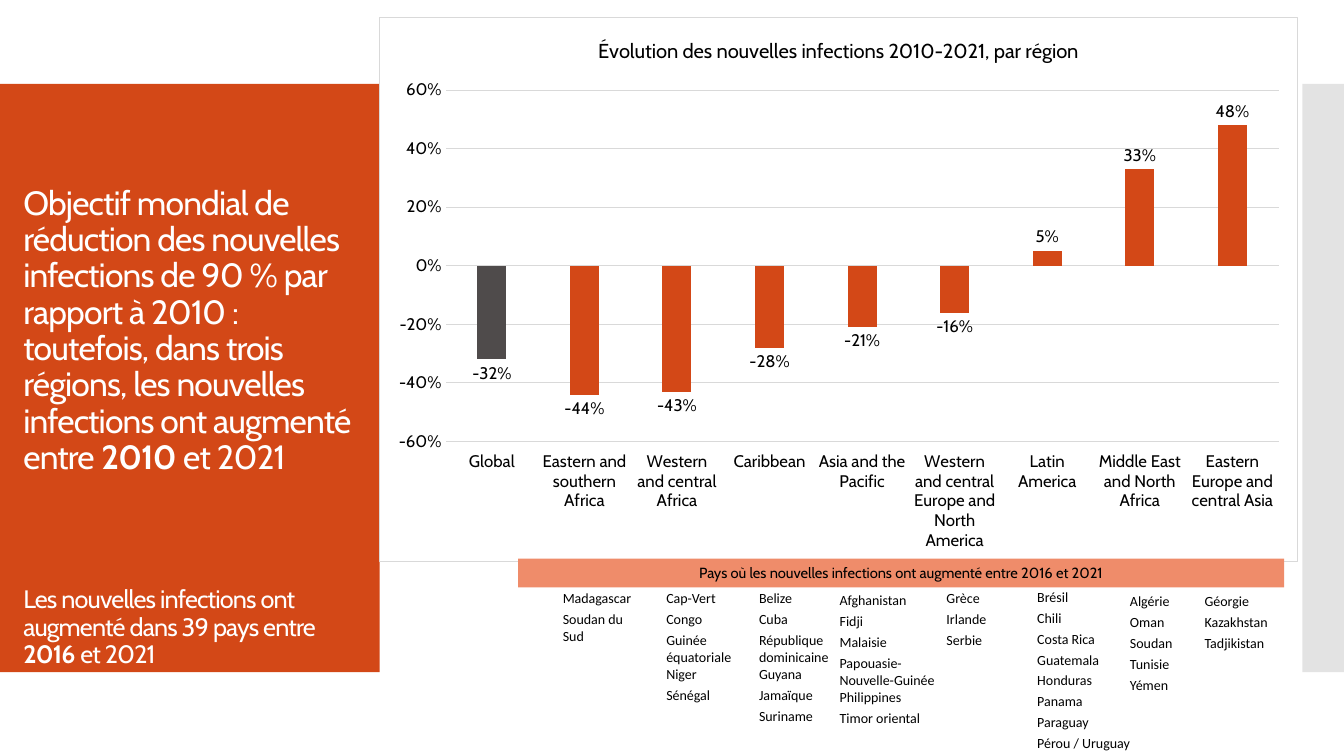
from lxml import etree
from pptx import Presentation
from pptx.chart.data import CategoryChartData
from pptx.dml.color import RGBColor
from pptx.enum.chart import XL_CHART_TYPE, XL_LABEL_POSITION, XL_TICK_LABEL_POSITION, XL_TICK_MARK
from pptx.enum.shapes import MSO_SHAPE
from pptx.enum.text import MSO_ANCHOR, PP_ALIGN
from pptx.oxml import parse_xml
from pptx.oxml.ns import nsdecls, qn
from pptx.util import Inches, Pt

RECT = MSO_SHAPE.RECTANGLE
CLUSTER = XL_CHART_TYPE.COLUMN_CLUSTERED
OUTSIDE = XL_LABEL_POSITION.OUTSIDE_END
LOW = XL_TICK_LABEL_POSITION.LOW
NO_TICK = XL_TICK_MARK.NONE
LEFT, CENTER = PP_ALIGN.LEFT, PP_ALIGN.CENTER
TOP, MIDDLE = MSO_ANCHOR.TOP, MSO_ANCHOR.MIDDLE

ORANGE = RGBColor(0xD3, 0x48, 0x17)
SALMON = RGBColor(0xEF, 0x8C, 0x6A)
DARK = RGBColor(0x4F, 0x4B, 0x4B)
GRAY = RGBColor(0xC8, 0xC8, 0xC8)
LINE = RGBColor(0xD9, 0xD9, 0xD9)
BLACK = RGBColor(0, 0, 0)
WHITE = RGBColor(255, 255, 255)

deck = Presentation()
deck.slide_width, deck.slide_height = Inches(13.33), Inches(7.5)
COL, ROW = deck.slide_width / 100, deck.slide_height / 100
slide = deck.slides.add_slide(deck.slide_layouts[6])


def area(x, y, wide, high):
    """Turn shares of the slide, in percent, into a box."""
    return int(x * COL), int(y * ROW), int(wide * COL), int(high * ROW)


def write(frame, text, size=10, font="Cabin", color=BLACK, align=LEFT, space=1.0, track=0):
    """Fill a text frame; parts between * are bold."""
    frame.word_wrap = True
    para = frame.paragraphs[0]
    para.alignment, para.line_spacing = align, space
    for i, part in enumerate(text.split("*")):
        run = para.add_run()
        run.text = part
        run.font.size, run.font.name = Pt(size), font
        run.font.color.rgb = color
        run.font.bold = i % 2 == 1
        if track:
            run.font._element.set("spc", str(track))


# Side panels
for box, tone in [((0, 11.1, 28.25, 77.8), ORANGE), ((96.9, 11.1, 3.1, 77.8), GRAY)]:
    panel = slide.shapes.add_shape(RECT, *area(*box))
    panel.shadow.inherit = False
    panel.fill.solid()
    panel.fill.fore_color.rgb = tone
    panel.line.fill.background()
tint = panel.fill._xPr.find(".//" + qn("a:srgbClr"))
etree.SubElement(tint, qn("a:alpha")).set("val", "50000")

# Headline and note
heads = [
    (24, 24, 40, "Objectif mondial de réduction des nouvelles infections de 90 % par rapport à 2010 : "
     "toutefois, dans trois régions, les nouvelles infections ont augmenté entre *2010* et 2021"),
    (18, 77, 12, "Les nouvelles infections ont augmenté dans 39 pays entre *2016* et 2021"),
]
for size, y, high, text in heads:
    box = slide.shapes.add_textbox(*area(1, y, 25.9, high))
    write(box.text_frame, text, size=size, color=WHITE, space=0.9, track=-60)

# Chart of change by region
change = [
    ("Global", -0.32), ("Eastern and southern Africa", -0.44),
    ("Western and central Africa", -0.43), ("Caribbean", -0.28),
    ("Asia and the Pacific", -0.21),
    ("Western and central Europe and North America", -0.16),
    ("Latin America", 0.05), ("Middle East and North Africa", 0.33),
    ("Eastern Europe and central Asia", 0.48),
]
data = CategoryChartData(number_format="0%")
data.categories = [name for name, rate in change]
data.add_series("Series 1", [rate for name, rate in change])
chart = slide.shapes.add_chart(CLUSTER, *area(28.2, 2.2, 68.35, 72.2), data).chart
chart.has_legend = False
chart.font.size, chart.font.name = Pt(12), "Cabin"
chart.font.color.rgb = BLACK
chart.has_title = True
chart.chart_title.include_in_layout = False
write(chart.chart_title.text_frame, "Évolution des nouvelles infections 2010-2021, par région",
      size=14.4, align=CENTER)

plot = chart.plots[0]
plot.vary_by_categories = False
plot.gap_width, plot.overlap = 219, -27
bars = plot.series[0]
bars.invert_if_negative = False
for part, tone in [(bars, ORANGE), (bars.points[0], DARK)]:
    part.format.fill.solid()
    part.format.fill.fore_color.rgb = tone
plot.has_data_labels = True
tags = plot.data_labels
tags.show_value = True
tags.number_format, tags.number_format_is_linked = "0%", False
tags.position = OUTSIDE
tags.font.size, tags.font.name = Pt(12), "Cabin"
tags.font.color.rgb = BLACK

# Axes
cats, vals = chart.category_axis, chart.value_axis
for axis in (cats, vals):
    axis.major_tick_mark = axis.minor_tick_mark = NO_TICK
cats.tick_label_position = LOW
vals.minimum_scale, vals.maximum_scale, vals.major_unit = -0.6, 0.6, 0.2
vals.tick_labels.number_format = "0%"
vals.tick_labels.number_format_is_linked = False
vals.format.line.fill.background()
for line in (cats.format.line, vals.major_gridlines.format.line):
    line.color.rgb, line.width = LINE, Pt(0.75)

# Plot place and chart border
place = {"x": 0.072, "y": 0.134, "w": 0.908, "h": 0.645}
room = chart._chartSpace.find(".//" + qn("c:plotArea"))
for old in room.findall(qn("c:layout")):
    room.remove(old)
modes = "".join(f'<c:{key}Mode val="edge"/>' for key in "xy")
spots = "".join(f'<c:{key} val="{share}"/>' for key, share in place.items())
room.insert(0, parse_xml(
    f'<c:layout {nsdecls("c")}><c:manualLayout><c:layoutTarget val="inner"/>'
    f'{modes}{spots}</c:manualLayout></c:layout>'))
chart._chartSpace.find(qn("c:chart")).addnext(parse_xml(
    f'<c:spPr {nsdecls("c", "a")}><a:noFill/><a:ln w="9525"><a:solidFill>'
    f'<a:srgbClr val="{LINE}"/></a:solidFill></a:ln></c:spPr>'))

# Country lists under the regions: left, top, width, names
lists = [
    (41.2, 77.9, 6.4, ["Madagascar", "Soudan du Sud"]),
    (48.9, 77.9, 7.95, ["Cap-Vert", "Congo", "Guinée équatoriale", "Niger", "Sénégal"]),
    (55.8, 77.9, 6.6, ["Belize", "Cuba", "République dominicaine", "Guyana", "Jamaïque",
                       "Suriname"]),
    (61.8, 78.15, 7.95, ["Afghanistan", "Fidji", "Malaisie", "Papouasie-Nouvelle-Guinée",
                         "Philippines", "Timor oriental"]),
    (69.75, 78, 5, ["Grèce", "Irlande", "Serbie"]),
    (76.5, 77.75, 8.6, ["Brésil", "Chili", "Costa Rica", "Guatemala", "Honduras", "Panama",
                        "Paraguay", "Pérou / Uruguay"]),
    (83.4, 78.4, 5, ["Algérie", "Oman", "Soudan", "Tunisie", "Yémen"]),
    (88.95, 78.4, 6.6, ["Géorgie", "Kazakhstan", "Tadjikistan"]),
]
STEP = 2.78
for x, y, wide, names in lists:
    grid = slide.shapes.add_table(len(names), 1, *area(x, y, wide, STEP * len(names))).table
    grid.first_row = grid.horz_banding = False
    for i, name in enumerate(names):
        grid.rows[i].height = int(STEP * ROW)
        cell = grid.cell(i, 0)
        cell.fill.background()
        cell.vertical_anchor = TOP
        cell.margin_left, cell.margin_bottom = Inches(0.09), 0
        cell.margin_top = cell.margin_right = Inches(0.01)
        write(cell.text_frame, name, font="Calibri")

# Banner over the lists
band = slide.shapes.add_shape(RECT, *area(38.55, 73.9, 57, 3.8))
band.shadow.inherit = False
band.fill.solid()
band.fill.fore_color.rgb = SALMON
band.line.fill.background()
band.text_frame.vertical_anchor = MIDDLE
write(band.text_frame, "Pays où les nouvelles infections ont augmenté entre 2016 et 2021",
      size=10.5, align=CENTER)

deck.save("out.pptx")
